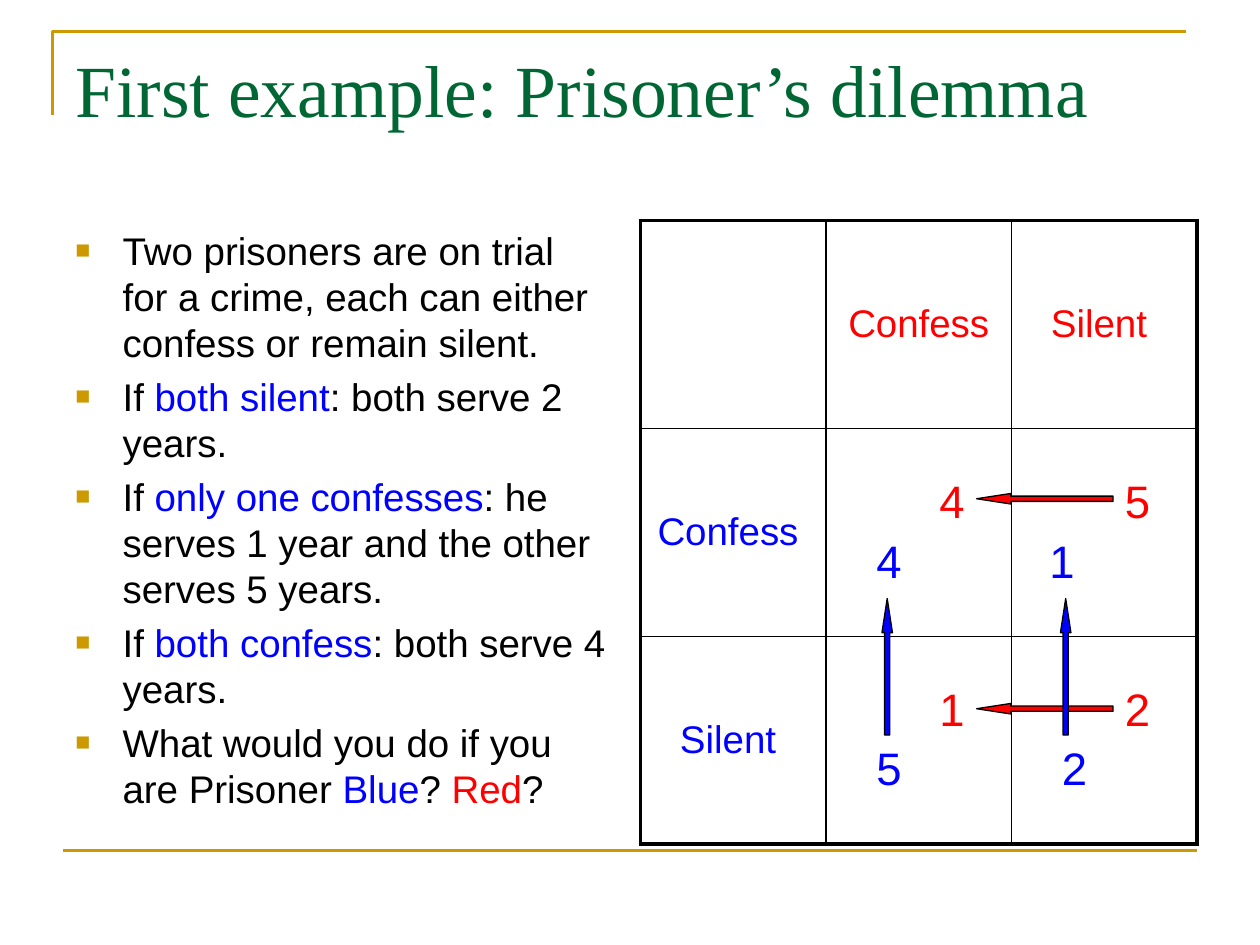
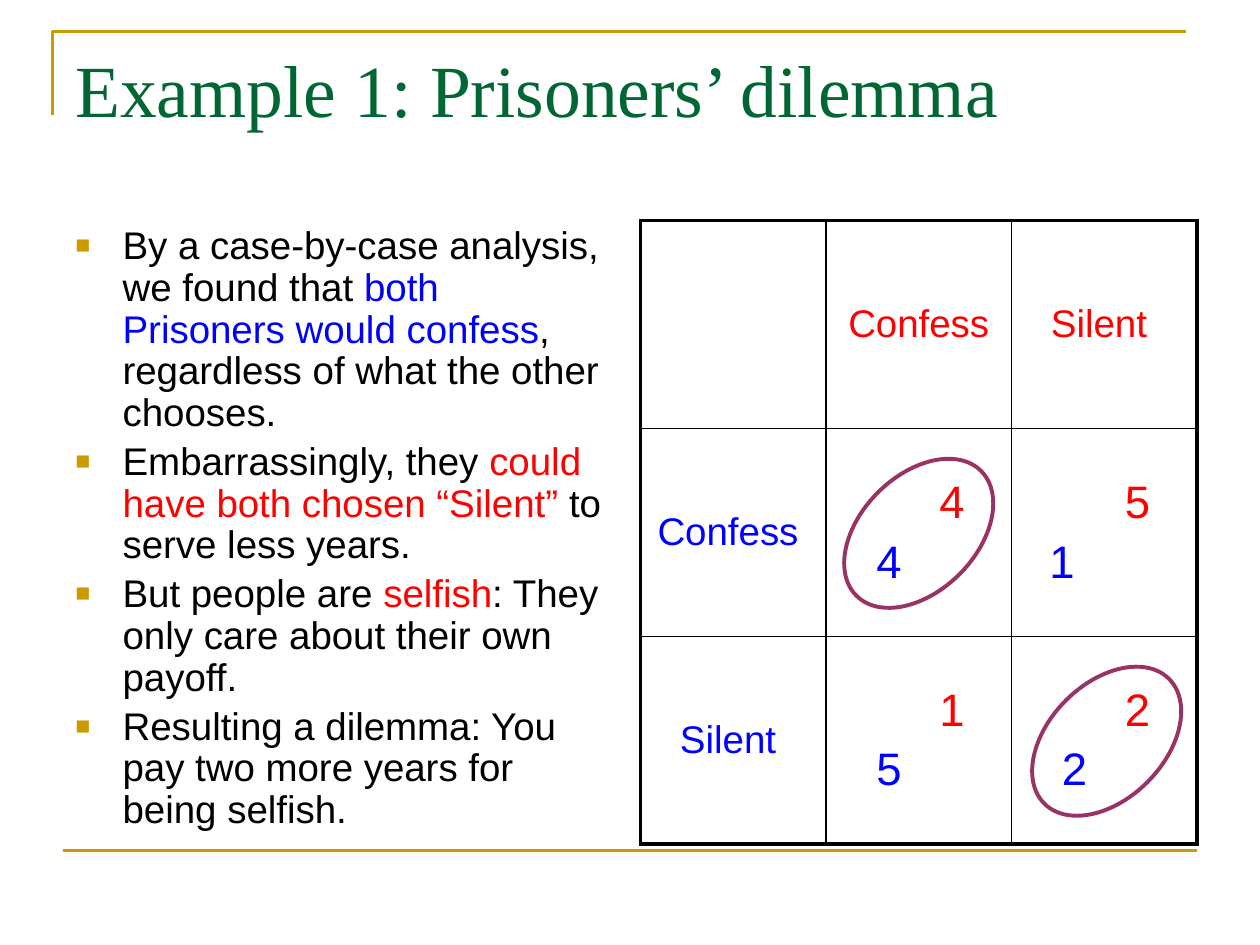
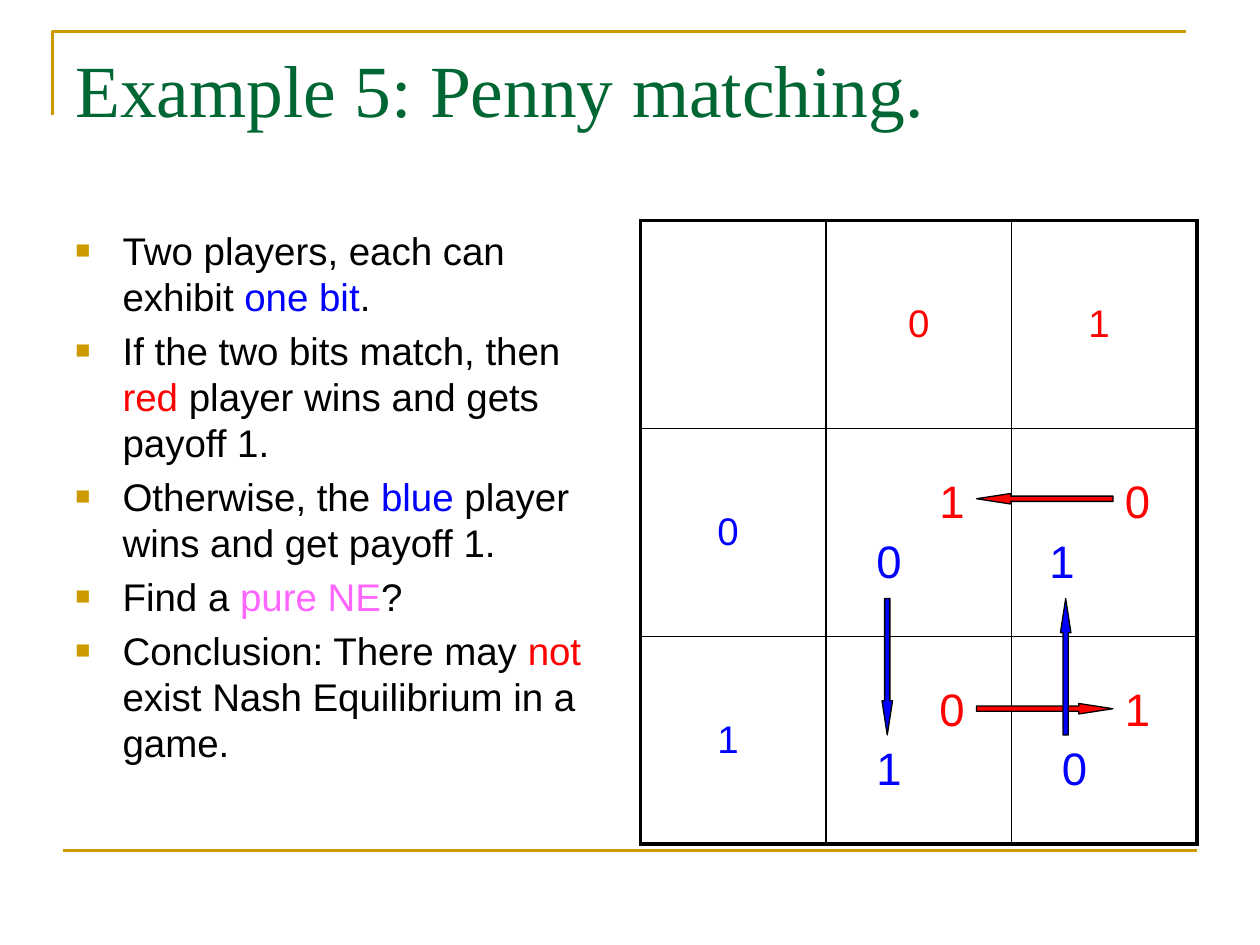
from lxml.etree import SubElement
from pptx import Presentation
from pptx.dml.color import RGBColor
from pptx.enum.shapes import MSO_CONNECTOR, MSO_SHAPE
from pptx.enum.text import MSO_ANCHOR, PP_ALIGN
from pptx.oxml.ns import qn
from pptx.util import Pt

PX = 7620
COLORS = {
    "black": "000000", "red": "FF0000", "blue": "0000FF", "pink": "FF66FF",
    "gold": "CC9900", "green": "006633", "plum": "993366",
}
BODY_FONT, TITLE_FONT = "Arial", "Times New Roman"
TITLE_BOX = (60, 36, 1080, 150)
BODY_BOX = (60, 210, 530, 594)
TABLE_BOX = (610, 210, 530, 594)
CORNER_BOX = (50, 30, 1080, 80)
FOOT_BOX = (60, 810, 1080, 0)
HANG = 45
RED_INDENT = 96
ROTATION = {"right": 0, "down": 90, "left": 180, "up": 270}
ARROW_SPOTS = [("red", 385, 265), ("red", 385, 465), ("blue", 235, 425), ("blue", 405, 425)]
RING_SPOTS = [(265, 298), (444, 496)]


def px(*values):
    return [round(v * PX) for v in values]


def rgb(name):
    return RGBColor.from_string(COLORS[name])


def add_run(p, text, size, color, font=BODY_FONT):
    r = p.add_run()
    r.text = text
    r.font.size = Pt(size)
    r.font.name = font
    r.font.color.rgb = rgb(color)


def set_line(s, color, width):
    s.line.color.rgb = rgb(color)
    s.line.width = Pt(width)


def add_text_frame(slide, box):
    tf = slide.shapes.add_textbox(*px(*box)).text_frame
    tf.word_wrap = True
    return tf


def add_frame(slide):
    x, y, w, h = CORNER_BOX
    builder = slide.shapes.build_freeform(*px(x, y + h))
    builder.add_line_segments([px(x, y), px(x + w, y)], close=False)
    corner = builder.convert_to_shape()
    corner.shadow.inherit = False
    corner.fill.background()
    set_line(corner, "gold", 1.5)
    x, y, w, h = FOOT_BOX
    foot = slide.shapes.add_connector(MSO_CONNECTOR.STRAIGHT, *px(x, y, x + w, y + h))
    SubElement(foot._element.spPr, qn("a:effectLst"))
    set_line(foot, "gold", 1.5)


def add_title(slide, box, title):
    tf = add_text_frame(slide, box)
    add_run(tf.paragraphs[0], title, 42, "green", TITLE_FONT)


def set_bullet(p):
    pPr = p._p.get_or_add_pPr()
    pPr.set("marL", str(HANG * PX))
    pPr.set("indent", str(-HANG * PX))
    color = SubElement(pPr, qn("a:buClr"))
    SubElement(color, qn("a:srgbClr"), val=COLORS["gold"])
    SubElement(pPr, qn("a:buSzPct"), val="65000")
    SubElement(pPr, qn("a:buFont"), typeface=BODY_FONT)
    SubElement(pPr, qn("a:buChar"), char="■")


def add_bullets(slide, box, bullets, spacing):
    tf = add_text_frame(slide, box)
    for i, runs in enumerate(bullets):
        p = tf.add_paragraph() if i else tf.paragraphs[0]
        p.line_spacing = spacing
        p.space_before = Pt(4.4)
        set_bullet(p)
        for run in runs:
            text, color = (run, "black") if isinstance(run, str) else run
            add_run(p, text, 22, color)


def set_borders(cell, row, col):
    tcPr = cell._tc.get_or_add_tcPr()
    outer = {"a:lnL": col == 0, "a:lnR": col == 2, "a:lnT": row == 0, "a:lnB": row == 2}
    for tag, thick in outer.items():
        ln = SubElement(tcPr, qn(tag), w=str(Pt(2.25 if thick else 1)))
        fill = SubElement(ln, qn("a:solidFill"))
        SubElement(fill, qn("a:srgbClr"), val=COLORS["black"])


def fill_label(cell, text, color, right):
    cell.margin_right = right * PX
    p = cell.text_frame.paragraphs[0]
    p.alignment = PP_ALIGN.CENTER
    add_run(p, text, 22, color)


def fill_payoffs(cell, red, blue, blue_indent):
    tf = cell.text_frame
    lines = [(red, "red", RED_INDENT), (blue, "blue", blue_indent)]
    for i, (value, color, indent) in enumerate(lines):
        p = tf.add_paragraph() if i else tf.paragraphs[0]
        p.space_before = Pt(5.2)
        p._p.get_or_add_pPr().set("marL", str(indent * PX))
        add_run(p, value, 26, color)


def add_game(slide, box, moves, payoffs):
    table = slide.shapes.add_table(3, 3, *px(*box)).table
    table.first_row = table.horz_banding = False
    for row in range(3):
        for col in range(3):
            cell = table.cell(row, col)
            cell.vertical_anchor = MSO_ANCHOR.MIDDLE
            set_borders(cell, row, col)
            cell.fill.background()
            if row and col:
                red, blue = payoffs[row - 1][col - 1]
                fill_payoffs(cell, red, blue, 24 if (row, col) == (1, 2) else 36)
            elif col:
                fill_label(cell, moves[col - 1], "red", 12 if col == 1 else 22)
            elif row:
                fill_label(cell, moves[row - 1], "blue", 22)


def add_centred(slide, kind, box, cx, cy, w, h, rotation):
    x, y = box[:2]
    s = slide.shapes.add_shape(kind, *px(x + cx - w / 2, y + cy - h / 2, w, h))
    s.shadow.inherit = False
    s.rotation = rotation
    return s


def add_arrows(slide, box, directions):
    for (color, cx, cy), direction in zip(ARROW_SPOTS, directions):
        s = add_centred(slide, MSO_SHAPE.RIGHT_ARROW, box, cx, cy, 130, 10, ROTATION[direction])
        s.adjustments[0] = 0.5
        s.adjustments[1] = 3.25
        s.fill.solid()
        s.fill.fore_color.rgb = rgb(color)
        set_line(s, "black", 0.75)


def add_rings(slide, box):
    for cx, cy in RING_SPOTS:
        s = add_centred(slide, MSO_SHAPE.OVAL, box, cx, cy, 110, 168, 45)
        s.fill.background()
        set_line(s, "plum", 2.25)


def add_game_slide(prs, title, bullets, moves, payoffs, directions=(), rings=False, spacing=1.0):
    slide = prs.slides.add_slide(prs.slide_layouts[6])
    add_frame(slide)
    add_title(slide, TITLE_BOX, title)
    add_bullets(slide, BODY_BOX, bullets, spacing)
    add_game(slide, TABLE_BOX, moves, payoffs)
    add_arrows(slide, TABLE_BOX, directions)
    if rings:
        add_rings(slide, TABLE_BOX)


PRISONER_MOVES = ["Confess", "Silent"]
PRISONER_PAYOFFS = [["44", "51"], ["15", "22"]]
PENNY_PAYOFFS = [["10", "01"], ["01", "10"]]

DILEMMA_RULES = [
    ["Two prisoners are on trial for a crime, each can either confess or remain silent."],
    ["If ", ("both silent", "blue"), ": both serve 2 years."],
    ["If ", ("only one confesses", "blue"), ": he serves 1 year and the other serves 5 years."],
    ["If ", ("both confess", "blue"), ": both serve 4 years."],
    ["What would you do if you are Prisoner ", ("Blue", "blue"), "? ", ("Red", "red"), "?"],
]
DILEMMA_RESULT = [
    ["By a case-by-case analysis, we found that ", ("both Prisoners would confess", "blue"),
     ", regardless of what the other chooses."],
    ["Embarrassingly, they ", ("could have both chosen “Silent”", "red"), " to serve less years."],
    ["But people are ", ("selfish", "red"), ": They only care about their own payoff."],
    ["Resulting a dilemma: You pay two more years for being selfish."],
]
PENNY_RULES = [
    ["Two players, each can exhibit ", ("one bit", "blue"), "."],
    ["If the two bits match, then ", ("red", "red"), " player wins and gets payoff 1."],
    ["Otherwise, the ", ("blue", "blue"), " player wins and get payoff 1."],
    ["Find a ", ("pure NE", "pink"), "?"],
    ["Conclusion: There may ", ("not", "red"), " exist Nash Equilibrium in a game."],
]


def main():
    prs = Presentation()
    prs.slide_width, prs.slide_height = px(1200, 900)
    add_game_slide(prs, "First example: Prisoner’s dilemma", DILEMMA_RULES,
                   PRISONER_MOVES, PRISONER_PAYOFFS, ["left", "left", "up", "up"])
    add_game_slide(prs, "Example 1: Prisoners’ dilemma", DILEMMA_RESULT,
                   PRISONER_MOVES, PRISONER_PAYOFFS, rings=True, spacing=0.9)
    add_game_slide(prs, "Example 5: Penny matching.", PENNY_RULES,
                   ["0", "1"], PENNY_PAYOFFS, ["left", "right", "down", "up"])
    prs.save("out.pptx")


if __name__ == "__main__":
    main()
